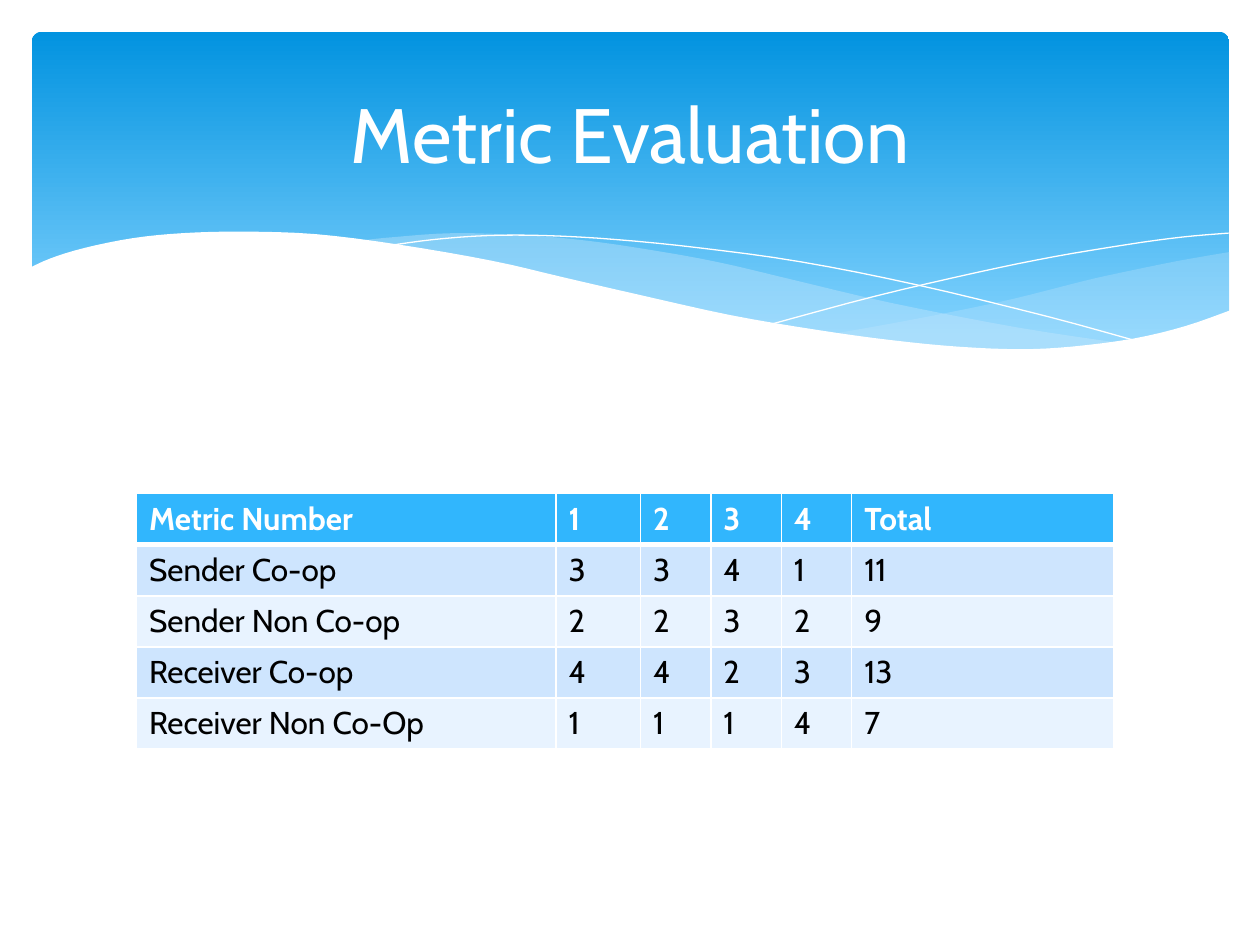
import pptx
import pptx.dml.color
import pptx.enum.shapes
import pptx.enum.text
import pptx.oxml
import pptx.oxml.ns
import pptx.util
from itertools import chain

Cm = pptx.util.Cm
Pt = pptx.util.Pt
RGBColor = pptx.dml.color.RGBColor

FONT = "Cabin"
WHITE = RGBColor(0xFF, 0xFF, 0xFF)
BLACK = RGBColor(0x00, 0x00, 0x00)
BANNER_TOP = RGBColor(0x02, 0x93, 0xE0)
BANNER_BOTTOM = RGBColor(0x83, 0xD3, 0xFE)
WAVE = RGBColor(0xC6, 0xE7, 0xFC)
HEADER = RGBColor(0x31, 0xB6, 0xFD)
BANDS = [RGBColor(0xCE, 0xE5, 0xFE), RGBColor(0xE8, 0xF3, 0xFF)]

# Points on the curves, in cm
RIGHT_WAVE = [
    [(24.79, 5.08), (23.75, 5.26), (22.63, 5.49), (21.87, 5.66), (20.45, 6.02),
     (19.13, 6.3), (17.93, 6.53), (16.79, 6.73)],
    [(16.79, 6.73), (17.91, 6.88), (18.92, 6.99), (20.4, 7.06), (21.44, 7.04),
     (22.38, 6.93), (23.19, 6.78), (23.93, 6.58), (24.79, 6.27)],
]
LEFT_WAVE = [
    [(22.68, 6.93), (20.5, 6.6), (17.93, 6.1), (15.98, 5.64), (14.45, 5.28),
     (13.06, 5.03), (11.81, 4.85), (10.67, 4.75), (9.17, 4.7), (7.95, 4.78),
     (7.26, 4.85)],
    [(7.26, 4.85), (8.69, 5.05), (10.26, 5.36), (11.4, 5.64), (13.46, 6.1),
     (15.27, 6.48), (16.89, 6.76), (18.34, 6.96), (19.63, 7.04),
     (20.78, 7.06), (21.77, 7.04), (22.68, 6.93)],
]
FALLING_LINE = [
    [(7.85, 4.95), (8.74, 4.83), (9.83, 4.75), (11, 4.75), (12.42, 4.83),
     (14.12, 5), (16.15, 5.28), (18.47, 5.74), (21.11, 6.38), (23.04, 6.91)],
]
RISING_LINE = [
    [(15.57, 6.53), (17.65, 5.97), (19.71, 5.49), (21.23, 5.18),
     (22.73, 4.93), (23.83, 4.78), (24.77, 4.7)],
]
WHITE_EDGE = [
    [(24.82, 6.25), (23.88, 6.58), (22.83, 6.83), (21.59, 6.99), (20.55, 7.04),
     (19.33, 6.99), (17.98, 6.86), (16.46, 6.65), (14.71, 6.35), (12.78, 5.92),
     (11.35, 5.59), (9.93, 5.26), (8.03, 4.93), (6.35, 4.72), (4.9, 4.67),
     (3.71, 4.7), (2.69, 4.8), (1.7, 5), (1.02, 5.21), (0.58, 5.41)],
    [(0.58, 8.36), (24.82, 8.36)],
]

COLUMNS = [8.46, 1.7, 1.42, 1.42, 1.42, 5.28]
ROW_HEIGHT = 1.03
ROWS = [
    ["Metric Number", "1", "2", "3", "4", "Total"],
    ["Sender Co-op", "3", "3", "4", "1", "11"],
    ["Sender Non Co-op", "2", "2", "3", "2", "9"],
    ["Receiver Co-op", "4", "4", "2", "3", "13"],
    ["Receiver Non Co-Op", "1", "1", "1", "4", "7"],
]


def smooth(points, steps=4):
    """Catmull-Rom curve through the points."""
    ends = [points[0], *points, points[-1]]
    curve = [points[0]]
    for a, b, c, d in zip(ends, ends[1:], ends[2:], ends[3:]):
        for t in (i / steps for i in range(1, steps + 1)):
            curve.append(tuple(
                q + ((r - p) * t + (2 * p - 5 * q + 4 * r - s) * t ** 2
                     + (3 * q - p - 3 * r + s) * t ** 3) / 2
                for p, q, r, s in zip(a, b, c, d)))
    return curve


def add_curve(s, curves, fill=None, alpha=None):
    """Filled area, or a white hairline when no fill is given."""
    points = [(Cm(x), Cm(y)) for x, y in chain.from_iterable(map(smooth, curves))]
    builder = s.shapes.build_freeform(*points[0], scale=1.0)
    builder.add_line_segments(points[1:], close=fill is not None)
    sp = builder.convert_to_shape()
    sp.shadow.inherit = False
    if fill is None:
        sp.fill.background()
        sp.line.color.rgb = WHITE
        sp.line.width = Pt(0)
        return
    sp.fill.solid()
    sp.fill.fore_color.rgb = fill
    sp.line.fill.background()
    if alpha:
        color = sp.fill._xPr.find(".//" + pptx.oxml.ns.qn("a:srgbClr"))
        color.append(pptx.oxml.parse_xml(
            f'<a:alpha {pptx.oxml.ns.nsdecls("a")} val="{alpha * 1000}"/>'))


def add_banner(s):
    sp = s.shapes.add_shape(pptx.enum.shapes.MSO_SHAPE.ROUNDED_RECTANGLE,
                            Cm(0.64), Cm(0.64), Cm(24.14), Cm(6.86))
    sp.adjustments[0] = 0.03
    sp.shadow.inherit = False
    sp.line.fill.background()
    sp.fill.gradient()
    sp.fill.gradient_angle = 270
    stops = zip(sp.fill.gradient_stops, (0, 0.9), (BANNER_TOP, BANNER_BOTTOM))
    for stop, position, color in stops:
        stop.position = position
        stop.color.rgb = color


def add_run(p, text, size, color, bold=False):
    r = p.add_run()
    r.text = text
    r.font.name = FONT
    r.font.size = Pt(size)
    r.font.bold = bold
    r.font.color.rgb = color


def add_title(s, text):
    tf = s.shapes.add_textbox(Cm(1.27), Cm(0.94), Cm(22.86), Cm(3.48)).text_frame
    tf.word_wrap = True
    tf.vertical_anchor = pptx.enum.text.MSO_ANCHOR.MIDDLE
    p = tf.paragraphs[0]
    p.alignment = pptx.enum.text.PP_ALIGN.CENTER
    add_run(p, text, 44, WHITE)


def set_borders(cell, top, bottom):
    """White borders, widths in points."""
    tc_pr = cell._tc.get_or_add_tcPr()
    for i, (side, width) in enumerate(zip("LRTB", (1, 1, top, bottom))):
        tc_pr.insert(i, pptx.oxml.parse_xml(
            f'<a:ln{side} {pptx.oxml.ns.nsdecls("a")} w="{Pt(width)}"><a:solidFill>'
            f'<a:srgbClr val="{WHITE}"/></a:solidFill></a:ln{side}>'))


def add_metric_table(s):
    table = s.shapes.add_table(len(ROWS), len(COLUMNS), Cm(2.75), Cm(9.95),
                               Cm(sum(COLUMNS)), Cm(ROW_HEIGHT * len(ROWS))).table
    for column, width in zip(table.columns, COLUMNS):
        column.width = Cm(width)
    for i, values in enumerate(ROWS):
        table.rows[i].height = Cm(ROW_HEIGHT)
        header = i == 0
        for j, value in enumerate(values):
            cell = table.cell(i, j)
            cell.fill.solid()
            cell.fill.fore_color.rgb = HEADER if header else BANDS[(i - 1) % 2]
            set_borders(cell, 3 if i == 1 else 1, 3 if header else 1)
            add_run(cell.text_frame.paragraphs[0], value, 18,
                    WHITE if header else BLACK, header)


def main():
    prs = pptx.Presentation()
    prs.slide_width, prs.slide_height = Cm(25.4), Cm(19.05)
    s = prs.slides.add_slide(prs.slide_layouts[6])

    # Banner with waves
    add_banner(s)
    add_curve(s, RIGHT_WAVE, WAVE, 29)
    add_curve(s, LEFT_WAVE, WAVE, 40)
    add_curve(s, FALLING_LINE)
    add_curve(s, RISING_LINE)
    add_curve(s, WHITE_EDGE, WHITE)

    # Content
    add_title(s, "Metric Evaluation")
    add_metric_table(s)
    prs.save("out.pptx")


if __name__ == "__main__":
    main()
